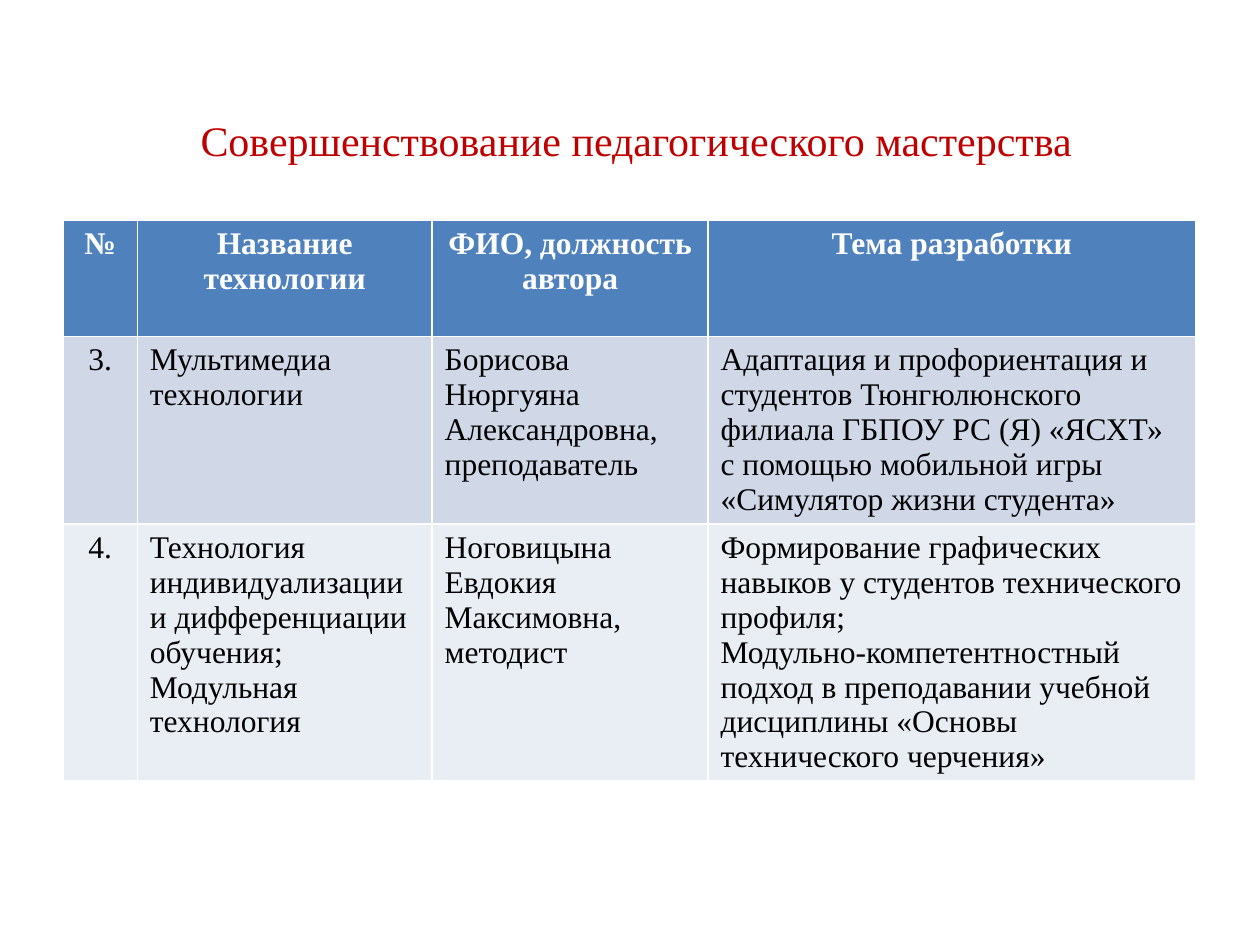
from pptx import Presentation
from pptx.dml.color import RGBColor
from pptx.enum import text
from pptx.util import Inches, Pt

WHITE = RGBColor(0xFF, 0xFF, 0xFF)
BLACK = RGBColor(0x00, 0x00, 0x00)
RED = RGBColor(0xC0, 0x00, 0x00)
BLUE = RGBColor(0x4F, 0x81, 0xBD)
BANDS = RGBColor(0xD0, 0xD8, 0xE8), RGBColor(0xE9, 0xED, 0xF4)
CENTER, LEFT = text.PP_ALIGN.CENTER, text.PP_ALIGN.LEFT

COLUMN_WIDTHS = 0.59, 2.34, 2.19, 3.87
ROW_HEIGHTS = 0.92, 1.49, 2.03
TECHNOLOGIES = [
    ["№", "Название технологии", "ФИО, должность автора", "Тема разработки"],
    ["3.", "Мультимедиа технологии",
     "Борисова Нюргуяна Александровна, преподаватель",
     "Адаптация и профориентация и студентов Тюнгюлюнского филиала "
     "ГБПОУ РС (Я) «ЯСХТ» с помощью мобильной игры «Симулятор жизни студента»"],
    ["4.", "Технология индивидуализации и дифференциации обучения;\n"
     "Модульная технология",
     "Ноговицына Евдокия Максимовна, методист",
     "Формирование графических навыков у студентов технического профиля;\n"
     "Модульно-компетентностный подход в преподавании учебной дисциплины "
     "«Основы технического черчения»"],
]


class SlideBuilder:
    """Holds the text style and the current slide, and adds elements to it."""

    def __init__(self, slide, font="Times New Roman"):
        self.slide = slide
        self.font = font

    def set_text(self, frame, wording, size, color, align, bold=False):
        frame.text = wording
        style = {"name": self.font, "size": Pt(size), "bold": bold}
        for paragraph in frame.paragraphs:
            paragraph.alignment = align
            for run in paragraph.runs:
                for key, value in style.items():
                    setattr(run.font, key, value)
                run.font.color.rgb = color

    def title(self, wording, left, top, width, height):
        heading = self.slide.shapes.title
        place = {"left": left, "top": top, "width": width, "height": height}
        for key, value in place.items():
            setattr(heading, key, Inches(value))
        frame = heading.text_frame
        layout = {"word_wrap": True, "auto_size": text.MSO_AUTO_SIZE.NONE,
                  "vertical_anchor": text.MSO_ANCHOR.TOP,
                  "margin_top": Inches(0.07)}
        for key, value in layout.items():
            setattr(frame, key, value)
        self.set_text(frame, wording, 24, RED, CENTER)

    def table(self, rows, left, top, widths, heights):
        grid = self.slide.shapes.add_table(
            len(rows), len(widths), Inches(left), Inches(top),
            Inches(sum(widths)), Inches(sum(heights))).table
        for column, width in zip(grid.columns, widths):
            column.width = Inches(width)
        for r, (row, height) in enumerate(zip(rows, heights)):
            grid.rows[r].height = Inches(height)
            header = r == 0
            for c, wording in enumerate(row):
                cell = grid.cell(r, c)
                cell.fill.solid()
                cell.fill.fore_color.rgb = BLUE if header else BANDS[(r - 1) % 2]
                self.set_text(cell.text_frame, wording, 18,
                              WHITE if header else BLACK,
                              CENTER if header or c == 0 else LEFT, header)


def main():
    deck = Presentation()
    deck.slide_width, deck.slide_height = Inches(10), Inches(7.5)
    builder = SlideBuilder(deck.slides.add_slide(deck.slide_layouts[5]))
    builder.title("Совершенствование педагогического мастерства",
                  0.48, 0.84, 9.14, 0.91)
    builder.table(TECHNOLOGIES, 0.5, 1.75, COLUMN_WIDTHS, ROW_HEIGHTS)
    deck.save("out.pptx")


if __name__ == "__main__":
    main()
